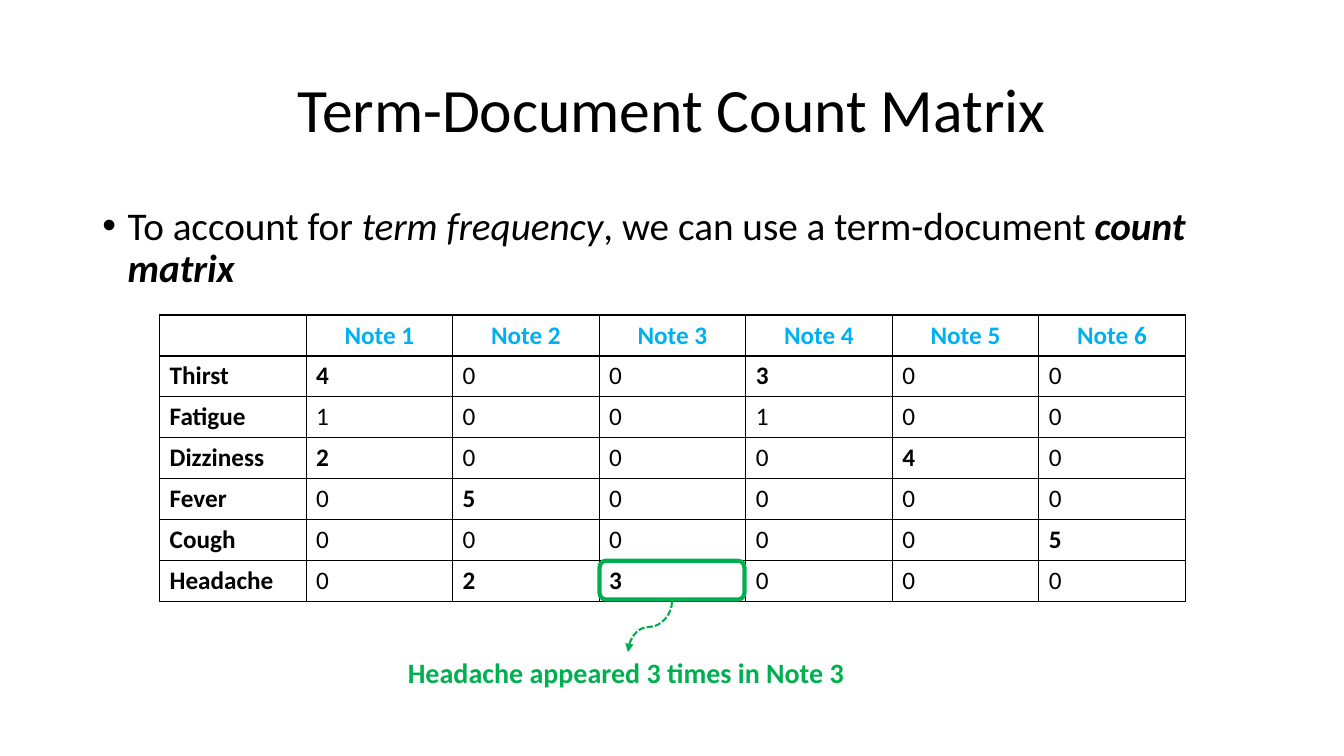
from lxml.etree import SubElement
from pptx import Presentation
from pptx.dml.color import RGBColor
from pptx.enum.dml import MSO_LINE
from pptx.enum.shapes import MSO_CONNECTOR, MSO_SHAPE
from pptx.enum.text import MSO_ANCHOR, MSO_AUTO_SIZE, PP_ALIGN
from pptx.oxml.ns import qn
from pptx.util import Pt

THEME = {
    "font": "Calibri",
    "ink": RGBColor(0x00, 0x00, 0x00),
    "note": RGBColor(0x00, 0xB0, 0xF0),
    "accent": RGBColor(0x00, 0xB0, 0x50),
    "title": 44, "body": 28, "table": 18, "caption": 20,
}
PX = 9525  # EMU in one px, 96 px to the inch


def box(left, top, width, height):
    return [length * PX for length in (left, top, width, height)]


def add_run(paragraph, text, size, color, bold=False, italic=False):
    run = paragraph.add_run()
    run.text = text
    run.font.name = THEME["font"]
    run.font.size = Pt(THEME[size])
    run.font.color.rgb = THEME[color]
    run.font.bold = bold
    run.font.italic = italic


presentation = Presentation()
presentation.slide_width, presentation.slide_height = 1280 * PX, 720 * PX
slide = presentation.slides.add_slide(presentation.slide_layouts[1])
shapes = slide.shapes

# Title and statement
heading, statement = slide.placeholders
for part, place in ((heading, box(88, 38, 1104, 139)), (statement, box(88, 192, 1125, 490))):
    part.left, part.top, part.width, part.height = place
    part.text_frame.auto_size = MSO_AUTO_SIZE.NONE
    part.text_frame.paragraphs[0].line_spacing = 0.9

heading.text_frame.vertical_anchor = MSO_ANCHOR.MIDDLE
heading_line = heading.text_frame.paragraphs[0]
heading_line.alignment = PP_ALIGN.CENTER
add_run(heading_line, "Term-Document Count Matrix", "title", "ink")

point = statement.text_frame.paragraphs[0]
point.space_before = Pt(10)
bullet = point._p.get_or_add_pPr()
bullet.set("marL", str(24 * PX))
bullet.set("indent", str(-24 * PX))
SubElement(bullet, qn("a:buFont"), typeface="Arial")
SubElement(bullet, qn("a:buChar"), char="•")
add_run(point, "To account for ", "body", "ink")
add_run(point, "term frequency", "body", "ink", italic=True)
add_run(point, ", we can use a term-document ", "body", "ink")
add_run(point, "count matrix", "body", "ink", bold=True, italic=True)

# Count matrix
counts = {
    "Thirst": (4, 0, 0, 3, 0, 0),
    "Fatigue": (1, 0, 0, 1, 0, 0),
    "Dizziness": (2, 0, 0, 0, 4, 0),
    "Fever": (0, 5, 0, 0, 0, 0),
    "Cough": (0, 0, 0, 0, 0, 5),
    "Headache": (0, 2, 3, 0, 0, 0),
}
matrix_rows = [["", *(f"Note {number}" for number in range(1, 7))]]
matrix_rows += [[term, *values] for term, values in counts.items()]
matrix = shapes.add_table(7, 7, *box(152, 300, 977, 273)).table
matrix.first_row = matrix.horz_banding = False
for row, values in enumerate(matrix_rows):
    for column, value in enumerate(values):
        cell = matrix.cell(row, column)
        entry = cell.text_frame.paragraphs[0]
        if row == 0:
            entry.alignment = PP_ALIGN.CENTER
        if value != "":
            # Labels and repeated terms stand out in bold
            bold = row == 0 or column == 0 or value > 1
            add_run(entry, str(value), "table", "ink" if row else "note", bold)
        borders = cell._tc.get_or_add_tcPr()
        for side in ("a:lnL", "a:lnR", "a:lnT", "a:lnB"):
            border = SubElement(borders, qn(side), w=str(Pt(1)))
            paint = SubElement(border, qn("a:solidFill"))
            SubElement(paint, qn("a:srgbClr"), val=str(THEME["ink"]))
        cell.fill.background()

# Highlighted count
highlight = shapes.add_shape(MSO_SHAPE.ROUNDED_RECTANGLE, *box(571, 534, 138, 37))
highlight.shadow.inherit = False
highlight.fill.background()
highlight.line.color.rgb = THEME["accent"]
highlight.line.width = Pt(3)

# Caption
caption = shapes.add_textbox(*box(379, 620, 437, 42)).text_frame
caption.word_wrap = False
caption.auto_size = MSO_AUTO_SIZE.SHAPE_TO_FIT_TEXT
add_run(caption.paragraphs[0], "Headache appeared 3 times in Note 3", "caption", "accent", bold=True)

# Curved arrow, turned a quarter so that it leaves the cell downwards
arrow = shapes.add_connector(MSO_CONNECTOR.CURVE, *box(595, 576, 643, 618))
arrow._element.spPr.find(qn("a:xfrm")).set("rot", str(90 * 60000))
arrow.line.color.rgb = THEME["accent"]
arrow.line.width = Pt(1.5)
arrow.line.dash_style = MSO_LINE.SQUARE_DOT
SubElement(arrow.line._get_or_add_ln(), qn("a:tailEnd"), type="triangle")
SubElement(arrow._element.spPr, qn("a:effectLst"))

presentation.save("out.pptx")
